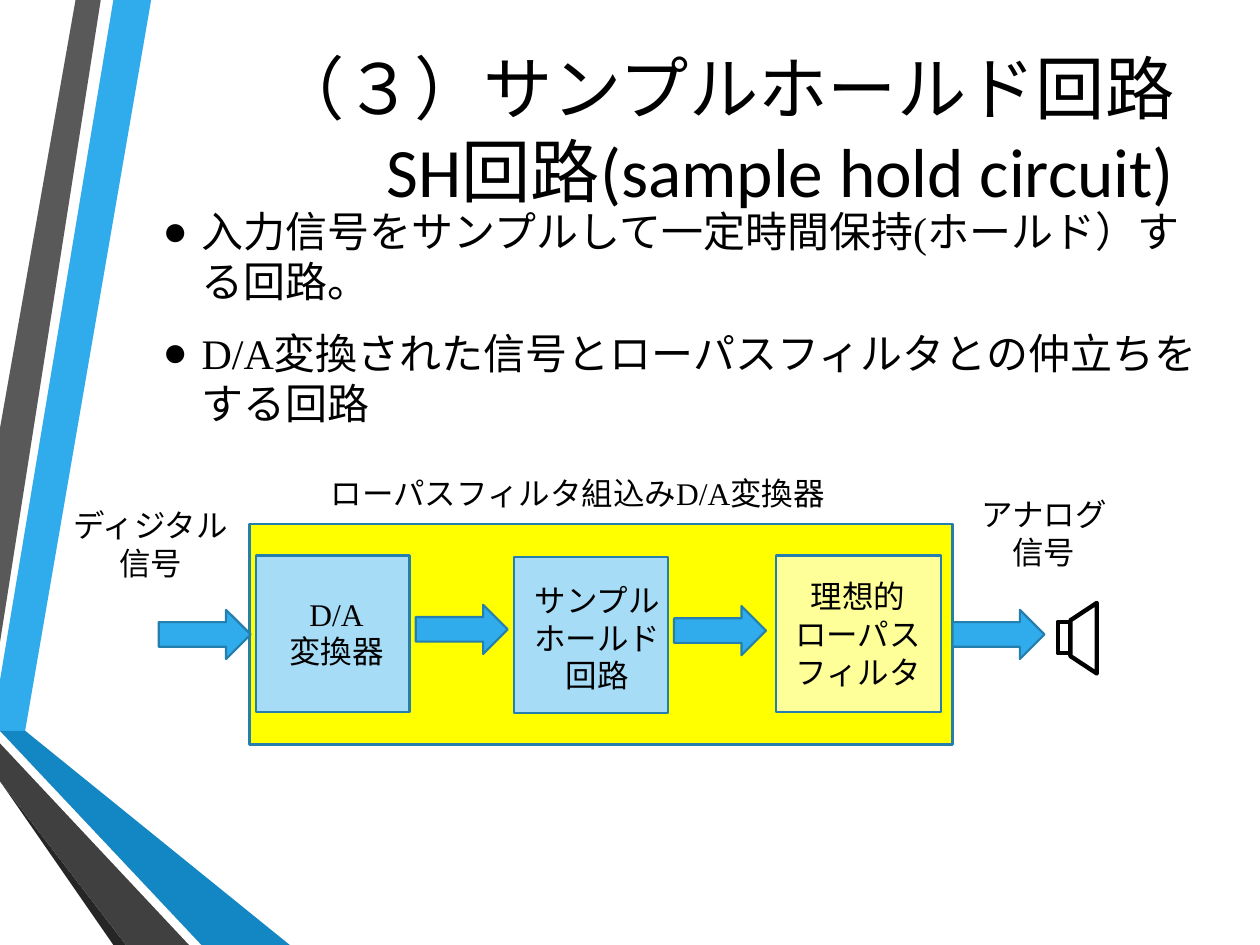
"""Build a slide on the sample-and-hold circuit of a D/A converter."""
import copy
from dataclasses import dataclass

import pptx
import pptx.dml.color
import pptx.enum.shapes
import pptx.enum.text
import pptx.oxml
import pptx.oxml.ns
import pptx.util

RGB = pptx.dml.color.RGBColor
MSO = pptx.enum.shapes.MSO_SHAPE
ALIGN = pptx.enum.text.PP_ALIGN
ANCHOR = pptx.enum.text.MSO_ANCHOR
AUTOSIZE = pptx.enum.text.MSO_AUTO_SIZE

WIDTH, HEIGHT = pptx.util.Inches(10), pptx.util.Inches(7.5)
COLS = 100
CELL = WIDTH // COLS

BLACK = RGB(0x00, 0x00, 0x00)
WHITE = RGB(0xFF, 0xFF, 0xFF)
SKY = RGB(0x30, 0xAC, 0xEC)
BLUE = RGB(0x12, 0x87, 0xC3)
NAVY = RGB(0x0C, 0x5A, 0x82)
EDGE = RGB(0x24, 0x7F, 0xAF)
PALE_BLUE = RGB(0xA7, 0xDC, 0xF7)
YELLOW = RGB(0xFF, 0xFF, 0x00)
PALE_YELLOW = RGB(0xFF, 0xFF, 0x99)
GREY = RGB(0x59, 0x59, 0x59)
DARK = RGB(0x40, 0x40, 0x40)
DARKEST = RGB(0x26, 0x26, 0x26)

TITLE = "（３）サンプルホールド回路\vSH回路(sample hold circuit)"
BULLETS = [
    "入力信号をサンプルして一定時間保持(ホールド）する回路。",
    "D/A変換された信号とローパスフィルタとの仲立ちをする回路",
]


@dataclass(frozen=True)
class Area:
    """Place on the grid, in columns and rows."""
    col: float
    row: float
    cols: float
    rows: float

    def box(self) -> list[int]:
        return [round(v * CELL) for v in (self.col, self.row, self.cols, self.rows)]


@dataclass(frozen=True)
class Ribbon:
    """Coloured band at the slide's edge."""
    color: RGB
    points: list[tuple[float, float]]


@dataclass(frozen=True)
class Block:
    """Filled preset shape of the diagram."""
    kind: MSO
    area: Area
    fill: RGB
    line: RGB = EDGE
    weight: float = 1.25
    rotation: float = 0


@dataclass(frozen=True)
class Label:
    """Centred text of the diagram."""
    area: Area
    lines: list[str]


def arrow(col: float, row: float) -> Block:
    return Block(MSO.RIGHT_ARROW, Area(col, row, 7.3, 3.9), SKY)


def stage(col: float, row: float, cols: float, fill: RGB) -> Block:
    return Block(MSO.RECTANGLE, Area(col, row, cols, 12.4), fill)


RIBBONS = [
    Ribbon(SKY, [(0, 54.4), (0, 57.5), (2.2, 57.9), (11.7, 0), (8.9, 0)]),
    Ribbon(GREY, [(8.3, 0), (5.5, 0), (0, 33.6), (0, 50.6)]),
    Ribbon(DARKEST, [(0, 61.9), (0, 62.1), (9.3, 75), (9.9, 75)]),
    Ribbon(NAVY, [(0, 57.9), (0, 58), (15.6, 75), (16.3, 75)]),
    Ribbon(BLUE, [(0, 57.9), (16.3, 75), (23.3, 75), (2.2, 57.9), (0, 57.5)]),
    Ribbon(DARK, [(0, 61.9), (9.9, 75), (15.1, 75), (0, 58.6)]),
]
BLOCKS = [
    Block(MSO.RECTANGLE, Area(19.8, 41.6, 55.8, 17.5), YELLOW),
    stage(20.3, 44.1, 12.2, PALE_BLUE),
    stage(40.8, 44.2, 12.2, PALE_BLUE),
    stage(61.6, 44.1, 13.1, PALE_YELLOW),
    arrow(12.6, 48.4),
    arrow(33, 48),
    arrow(53.5, 48.1),
    arrow(75.6, 48.4),
    Block(MSO.TRAPEZOID, Area(83.2, 49.6, 5.6, 2.1), WHITE, BLACK, 2.5, 270),
    Block(MSO.RECTANGLE, Area(83.95, 49.35, 1, 2.5), WHITE, BLACK, 2.5),
]
LABELS = [
    Label(Area(1.9, 39.7, 20.1, 7.1), ["ディジタル", "信号"]),
    Label(Area(24.5, 37.1, 42.7, 4), ["ローパスフィルタ組込みD/A変換器"]),
    Label(Area(72.8, 38.8, 20.1, 7.1), ["アナログ", "信号"]),
    Label(Area(20.3, 46.7, 12.8, 7.1), ["D/A", "変換器"]),
    Label(Area(41, 45.6, 12.8, 10.1), ["サンプルホールド回路"]),
    Label(Area(61.7, 45.3, 12.8, 10.1), ["理想的", "ローパス", "フィルタ"]),
]


def set_attrs(obj: object, values: dict) -> None:
    for name, value in values.items():
        setattr(obj, name, value)


def write(tf, lines: list[str], name: str, size: float, frame: dict, para: dict) -> None:
    set_attrs(tf, {"word_wrap": True, **frame})
    tf.text = "\n".join(lines)
    for p in tf.paragraphs:
        set_attrs(p, para)
        for r in p.runs:
            set_attrs(r.font, {"name": name, "size": pptx.util.Pt(size)})
            r.font.color.rgb = BLACK
        for br in p._p.findall(pptx.oxml.ns.qn("a:br")):
            br.append(copy.deepcopy(p.runs[0]._r.rPr))


def place(sp, area: Area) -> None:
    set_attrs(sp, dict(zip(("left", "top", "width", "height"), area.box())))


def add_bullet(p) -> None:
    pPr = p._p.get_or_add_pPr()
    pPr.set("marL", str(pptx.util.Inches(0.31)))
    pPr.set("indent", str(-pptx.util.Inches(0.31)))
    ns = pptx.oxml.ns.nsdecls("a")
    for xml in (f'<a:buClr {ns}><a:srgbClr val="{BLACK}"/></a:buClr>',
                f'<a:buChar {ns} char="●"/>'):
        pPr.append(pptx.oxml.parse_xml(xml))


def draw_ribbon(s, ribbon: Ribbon) -> None:
    builder = s.shapes.build_freeform(*ribbon.points[0], scale=CELL)
    builder.add_line_segments(ribbon.points[1:], close=True)
    sp = builder.convert_to_shape()
    sp.shadow.inherit = False
    sp.fill.solid()
    sp.fill.fore_color.rgb = ribbon.color
    sp.line.fill.background()


def draw_block(s, block: Block) -> None:
    sp = s.shapes.add_shape(block.kind, *block.area.box())
    sp.shadow.inherit = False
    sp.fill.solid()
    sp.fill.fore_color.rgb = block.fill
    sp.line.color.rgb = block.line
    sp.line.width = pptx.util.Pt(block.weight)
    sp.rotation = block.rotation
    if block.kind == MSO.TRAPEZOID:
        sp.adjustments[0] = 0.66


def draw_label(s, label: Label) -> None:
    sp = s.shapes.add_textbox(*label.area.box())
    write(sp.text_frame, label.lines, "Times New Roman", 18, {}, {"alignment": ALIGN.CENTER})


def main() -> None:
    prs = pptx.Presentation()
    set_attrs(prs, {"slide_width": WIDTH, "slide_height": HEIGHT})
    s = prs.slides.add_slide(prs.slide_layouts[1])
    title, body = s.placeholders
    for ribbon in RIBBONS:
        draw_ribbon(s, ribbon)
    place(title, Area(9.2, 4.6, 85, 11.2))
    write(title.text_frame, [TITLE], "Calibri", 39.6,
          {"auto_size": AUTOSIZE.NONE, "vertical_anchor": ANCHOR.MIDDLE},
          {"alignment": ALIGN.RIGHT})
    place(body, Area(11.9, 15.8, 85.8, 7.1))
    gap = pptx.util.Pt(6)
    write(body.text_frame, BULLETS, "Times New Roman", 24,
          {"auto_size": AUTOSIZE.NONE, "vertical_anchor": ANCHOR.TOP},
          {"space_before": gap, "space_after": gap})
    for p in body.text_frame.paragraphs:
        add_bullet(p)
    for block in BLOCKS:
        draw_block(s, block)
    for label in LABELS:
        draw_label(s, label)
    prs.save("out.pptx")


if __name__ == "__main__":
    main()
